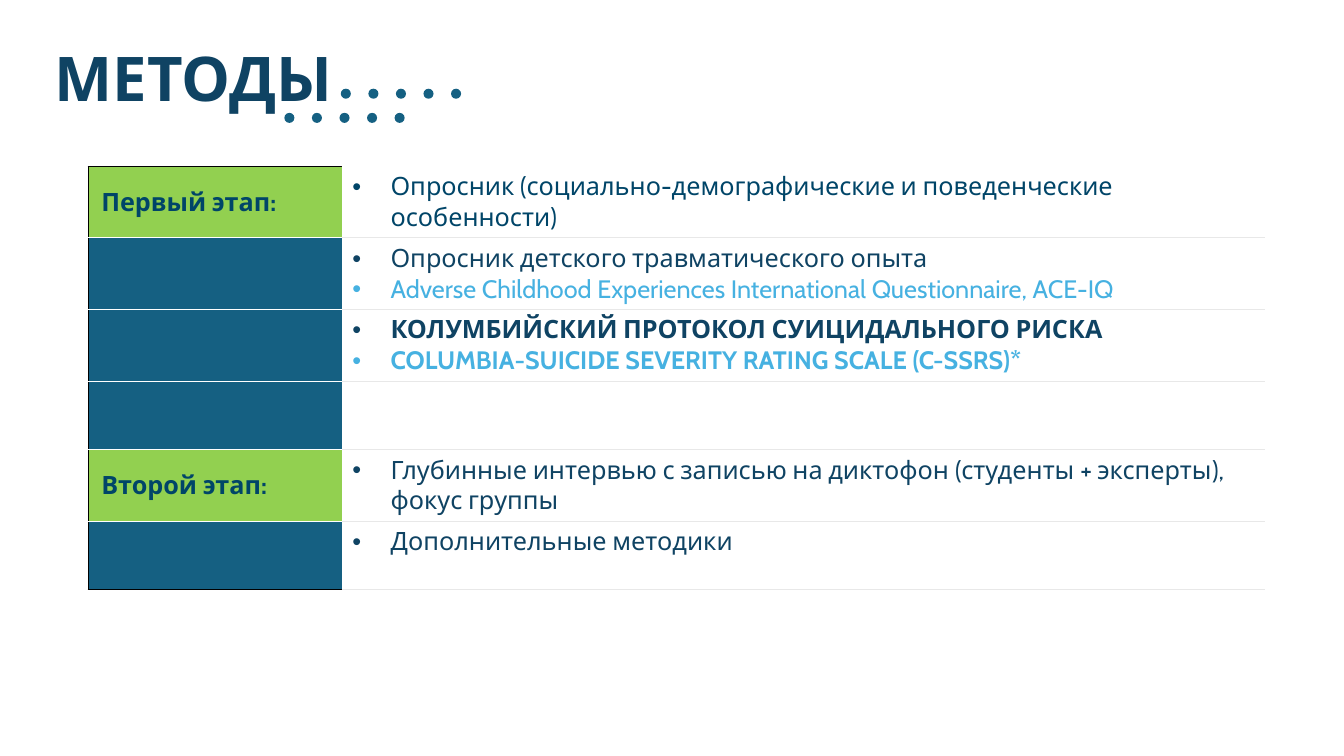
import pptx
import pptx.util
import pptx.dml.color
import pptx.enum.shapes
import pptx.enum.text
import pptx.oxml
import pptx.oxml.ns

RGBColor = pptx.dml.color.RGBColor
NAVY = RGBColor(0x0F, 0x43, 0x63)
DEEP = RGBColor(0x00, 0x45, 0x68)
TEAL = RGBColor(0x15, 0x60, 0x82)
SKY = RGBColor(0x46, 0xB1, 0xE1)
GREEN = RGBColor(0x92, 0xD0, 0x50)
WHITE = RGBColor(0xFF, 0xFF, 0xFF)
BLACK = RGBColor(0x00, 0x00, 0x00)
GREY = RGBColor(0xE8, 0xE8, 0xE8)

STAGES = [
    ("Первый этап:", [("Опросник (социально-демографические и поведенческие особенности)", DEEP, False)]),
    ("", [("Опросник детского травматического опыта", NAVY, False),
          ("Adverse Childhood Experiences International Questionnaire, ACE-IQ", SKY, False)]),
    ("", [("КОЛУМБИЙСКИЙ ПРОТОКОЛ СУИЦИДАЛЬНОГО РИСКА", NAVY, True),
          ("COLUMBIA-SUICIDE SEVERITY RATING SCALE (C-SSRS)*", SKY, True)]),
    ("", []),
    ("Второй этап:", [("Глубинные интервью с записью на диктофон (студенты + эксперты), фокус группы", NAVY, False)]),
    ("", [("Дополнительные методики", NAVY, False)]),
]


class SlideBuilder:
    font = "Cabin"
    body_size = 18

    def __init__(self, presentation):
        self.width = presentation.slide_width
        self.height = presentation.slide_height
        self.slide = presentation.slides.add_slide(presentation.slide_layouts[5])

    def across(self, percent):
        return round(self.width * percent / 100)

    def down(self, percent):
        return round(self.height * percent / 100)

    def box(self, left, top, width, height):
        return self.across(left), self.down(top), self.across(width), self.down(height)

    def run(self, paragraph, text, size, color, bold):
        run = paragraph.add_run()
        run.text = text
        run.font.name = self.font
        run.font.size = pptx.util.Pt(size)
        run.font.bold = bold
        run.font.color.rgb = color

    def title(self, text, *place):
        shape = self.slide.shapes.title
        shape.left, shape.top, shape.width, shape.height = self.box(*place)
        frame = shape.text_frame
        frame.auto_size = pptx.enum.text.MSO_AUTO_SIZE.NONE
        frame.vertical_anchor = pptx.enum.text.MSO_ANCHOR.TOP
        frame.margin_left = frame.margin_right = pptx.util.Inches(0.13)
        frame.margin_top = frame.margin_bottom = pptx.util.Inches(0.13)
        paragraph = frame.paragraphs[0]
        paragraph.alignment = pptx.enum.text.PP_ALIGN.LEFT
        paragraph.line_spacing = 0.9
        self.run(paragraph, text, 44, NAVY, True)

    def borders(self, cell, left, right, top, bottom):
        properties = cell._tc.get_or_add_tcPr()
        for side, color in zip("LRTB", (left, right, top, bottom)):
            properties.append(pptx.oxml.parse_xml(
                f'<a:ln{side} {pptx.oxml.ns.nsdecls("a")} w="{pptx.util.Pt(0.75)}">'
                f'<a:solidFill><a:srgbClr val="{color}"/></a:solidFill></a:ln{side}>'))

    def stage_cell(self, cell, text, top, bottom):
        self.borders(cell, BLACK, WHITE, top, bottom)
        cell.fill.solid()
        cell.fill.fore_color.rgb = GREEN if text else TEAL
        cell.vertical_anchor = pptx.enum.text.MSO_ANCHOR.MIDDLE
        cell.margin_left = cell.margin_right = pptx.util.Inches(0.13)
        cell.margin_top = cell.margin_bottom = 0
        if text:
            self.run(cell.text_frame.paragraphs[0], text, self.body_size, DEEP, True)

    def methods_cell(self, cell, methods, top):
        self.borders(cell, WHITE, WHITE, top, GREY)
        cell.fill.background()
        frame = cell.text_frame
        indent = pptx.util.Inches(0.38)
        for index, (text, color, bold) in enumerate(methods):
            paragraph = frame.add_paragraph() if index else frame.paragraphs[0]
            properties = paragraph._p.get_or_add_pPr()
            properties.set("marL", str(indent))
            properties.set("indent", str(-indent))
            for bullet in ('<a:buFont {} typeface="Arial"/>', '<a:buChar {} char="•"/>'):
                properties.append(pptx.oxml.parse_xml(bullet.format(pptx.oxml.ns.nsdecls("a"))))
            self.run(paragraph, text, self.body_size, color, bold)

    def table(self, stages, left, top, column_widths, row_height):
        count = len(stages)
        place = self.box(left, top, sum(column_widths), row_height * count)
        table = self.slide.shapes.add_table(count, len(column_widths), *place).table
        table.first_row = table.horz_banding = False
        for column, width in zip(table.columns, column_widths):
            column.width = self.across(width)
        for index, (stage, methods) in enumerate(stages):
            table.rows[index].height = self.down(row_height)
            self.stage_cell(table.cell(index, 0), stage,
                            WHITE if index else BLACK,
                            WHITE if index < count - 1 else BLACK)
            self.methods_cell(table.cell(index, 1), methods, GREY if index else WHITE)

    def dots(self, starts, count, pitch, width, height):
        group = self.slide.shapes.add_group_shape()
        for left, top in starts:
            for index in range(count):
                dot = group.shapes.add_shape(
                    pptx.enum.shapes.MSO_SHAPE.OVAL,
                    *self.box(left + index * pitch, top, width, height))
                dot.shadow.inherit = False
                dot.fill.solid()
                dot.fill.fore_color.rgb = TEAL
                dot.line.fill.background()


def main():
    presentation = pptx.Presentation()
    presentation.slide_width = pptx.util.Inches(13.33)
    presentation.slide_height = pptx.util.Inches(7.5)
    builder = SlideBuilder(presentation)
    builder.title("МЕТОДЫ", 3.08, 4.67, 24.68, 13.73)
    builder.table(STAGES, 6.56, 22, (18.9, 68.64), 9.05)
    builder.dots([(25.36, 11.73), (21.16, 14.93)], 5, 2.05, 0.75, 1.33)
    presentation.save("out.pptx")


if __name__ == "__main__":
    main()
